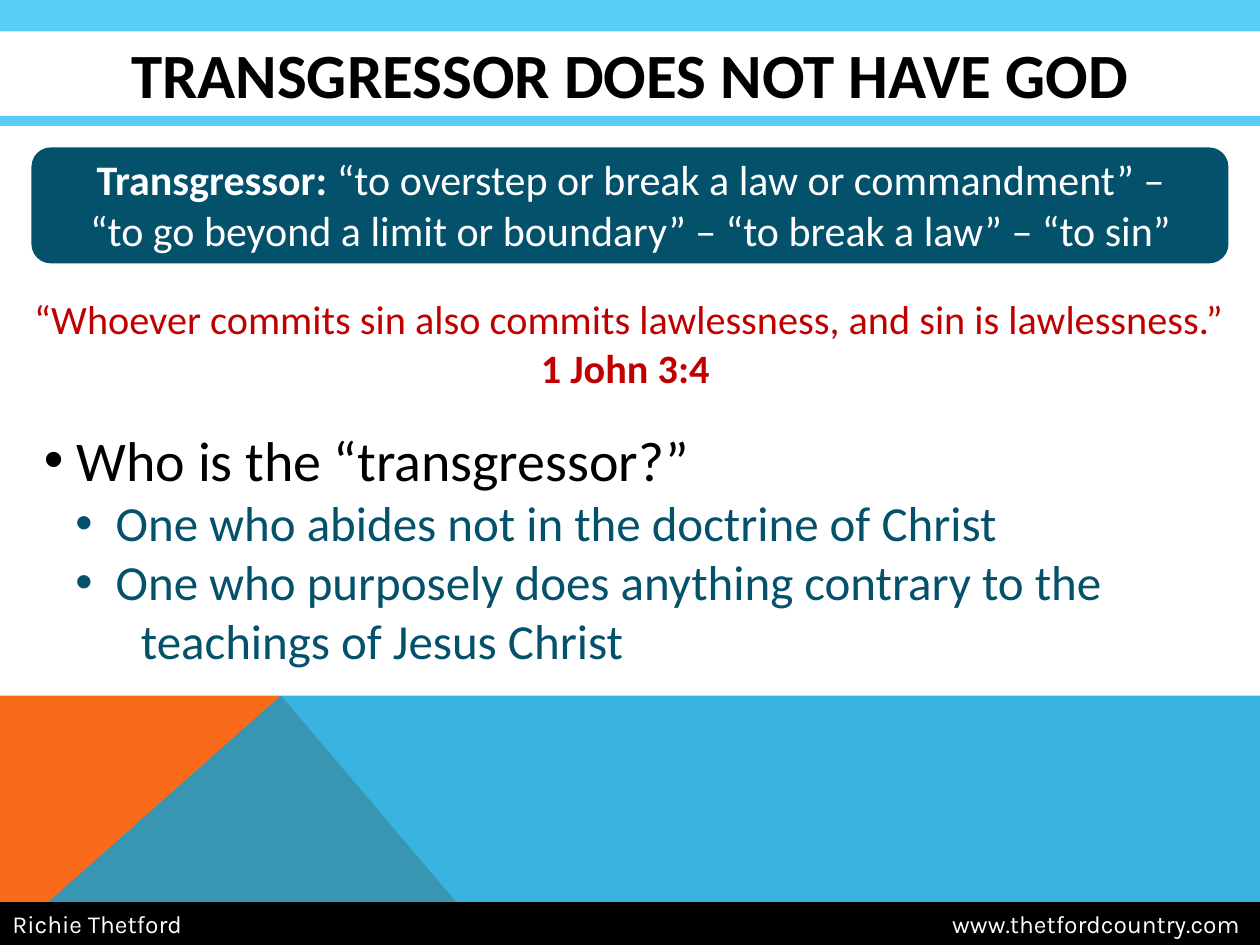
from dataclasses import dataclass

from lxml.etree import SubElement
from pptx import Presentation
from pptx.dml.color import RGBColor
from pptx.enum.shapes import MSO_SHAPE as Preset
from pptx.enum.text import MSO_ANCHOR as Anchor, PP_ALIGN as Align
from pptx.oxml.ns import qn
from pptx.util import Inches, Pt

WIDTH, HEIGHT = 10, 7.5
FOOTER_TOP = 7.16
COLORS = {
    "sky": "5ACEF9", "navy": "04516C", "orange": "F96A1B", "blue": "08A1D9",
    "red": "C00000", "black": "000000", "white": "FFFFFF",
}


@dataclass(frozen=True)
class Box:
    left: float
    top: float
    width: float
    height: float

    def emu(self) -> tuple:
        return tuple(Inches(n) for n in (self.left, self.top, self.width, self.height))


@dataclass(frozen=True)
class Run:
    text: str
    size: float
    color: str
    bold: bool = False
    font: str = "Calibri"


@dataclass(frozen=True)
class Line:
    """One paragraph; margin and hang are inches, a hang draws a bullet."""
    runs: tuple[Run, ...]
    align: Align = Align.LEFT
    margin: float = 0
    hang: float = 0


@dataclass(frozen=True)
class TextBlock:
    box: Box
    lines: tuple[Line, ...]
    anchor: Anchor = Anchor.TOP


@dataclass(frozen=True)
class Panel:
    box: Box
    color: str
    preset: Preset = Preset.RECTANGLE


@dataclass(frozen=True)
class Polygon:
    points: tuple[tuple[float, float], ...]
    color: str
    opacity: int = 100


def paint(shape, color: str, opacity: int = 100) -> None:
    shape.shadow.inherit = False
    shape.line.fill.background()
    shape.fill.solid()
    shape.fill.fore_color.rgb = RGBColor.from_string(COLORS[color])
    if opacity < 100:
        color_node = shape.fill._xPr.find(qn("a:solidFill"))[0]
        SubElement(color_node, qn("a:alpha")).set("val", str(opacity * 1000))


def draw_polygon(slide, polygon: Polygon) -> None:
    start, *others = [(Inches(x), Inches(y)) for x, y in polygon.points]
    builder = slide.shapes.build_freeform(*start)
    builder.add_line_segments(others, close=True)
    paint(builder.convert_to_shape(), polygon.color, polygon.opacity)


def draw_panel(slide, panel: Panel) -> None:
    paint(slide.shapes.add_shape(panel.preset, *panel.box.emu()), panel.color)


def indent(paragraph, line: Line) -> None:
    properties = paragraph._p.get_or_add_pPr()
    properties.set("marL", str(Inches(line.margin)))
    properties.set("indent", str(-Inches(line.hang)))
    if line.hang:
        SubElement(properties, qn("a:buFont")).set("typeface", "Arial")
        SubElement(properties, qn("a:buChar")).set("char", "•")


def draw_text(slide, block: TextBlock) -> None:
    frame = slide.shapes.add_textbox(*block.box.emu()).text_frame
    frame.word_wrap = True
    frame.vertical_anchor = block.anchor
    for index, line in enumerate(block.lines):
        paragraph = frame.add_paragraph() if index else frame.paragraphs[0]
        paragraph.alignment = line.align
        indent(paragraph, line)
        for item in line.runs:
            run = paragraph.add_run()
            run.text = item.text
            run.font.name = item.font
            run.font.size = Pt(item.size)
            run.font.bold = item.bold
            run.font.color.rgb = RGBColor.from_string(COLORS[item.color])


def answer(text: str, margin: float = 0.57, hang: float = 0.32) -> Line:
    return Line((Run(text, 28, "navy"),), margin=margin, hang=hang)


def footer(text: str, align: Align, left: float) -> TextBlock:
    box = Box(left, FOOTER_TOP, WIDTH / 2, HEIGHT - FOOTER_TOP)
    run = Run(text, 14, "white", font="Karla")
    return TextBlock(box, (Line((run,), align),), Anchor.MIDDLE)


POLYGONS = (
    Polygon(((0, HEIGHT), (0, 5.52), (2.23, 5.52), (3.91, HEIGHT)), "orange"),
    Polygon(((0, HEIGHT), (2.23, 5.52), (WIDTH, 5.52), (WIDTH, HEIGHT)), "blue", 80),
)
PANELS = (
    Panel(Box(0, 0, WIDTH, 0.25), "sky"),
    Panel(Box(0, 0.92, WIDTH, 0.08), "sky"),
    Panel(Box(0.25, 1.17, 9.5, 0.92), "navy", Preset.ROUNDED_RECTANGLE),
    Panel(Box(0, FOOTER_TOP, WIDTH, HEIGHT - FOOTER_TOP), "black"),
)
TITLE = Run("TRANSGRESSOR DOES NOT HAVE GOD", 36, "black", True)
DEFINITION = (
    Run("Transgressor:", 24, "white", True),
    Run(" “to overstep or break a law or commandment” – “to go beyond a limit "
        "or boundary” – “to break a law” – “to sin”", 24, "white"),
)
VERSE = Run("“Whoever commits sin also commits lawlessness, and sin is lawlessness.”",
            23, "red")
QUESTION = Run("Who is the “transgressor?”", 32, "black")
TEXTS = (
    TextBlock(Box(0, 0.25, WIDTH, 0.67), (Line((TITLE,), Align.CENTER),), Anchor.MIDDLE),
    TextBlock(Box(0.25, 3.33, 9.58, 2.05), (
        Line((QUESTION,), margin=0.26, hang=0.26),
        answer("One who abides not in the doctrine of Christ"),
        answer("One who purposely does anything contrary to the"),
        answer("teachings of Jesus Christ", margin=0.77, hang=0),
    )),
    TextBlock(Box(0.42, 1.17, 9.17, 0.91), (Line(DEFINITION, Align.CENTER),)),
    TextBlock(Box(0, 2.29, WIDTH, 0.88), (
        Line((VERSE,), Align.CENTER),
        Line((Run("1 John 3:4 ", 23, "red", True),), Align.CENTER),
    )),
    footer("Richie Thetford", Align.LEFT, 0),
    footer("www.thetfordcountry.com", Align.RIGHT, WIDTH / 2 - 0.06),
)


def main() -> None:
    presentation = Presentation()
    presentation.slide_width = Inches(WIDTH)
    presentation.slide_height = Inches(HEIGHT)
    slide = presentation.slides.add_slide(presentation.slide_layouts[6])
    for polygon in POLYGONS:
        draw_polygon(slide, polygon)
    for panel in PANELS:
        draw_panel(slide, panel)
    for block in TEXTS:
        draw_text(slide, block)
    presentation.save("out.pptx")


if __name__ == "__main__":
    main()
